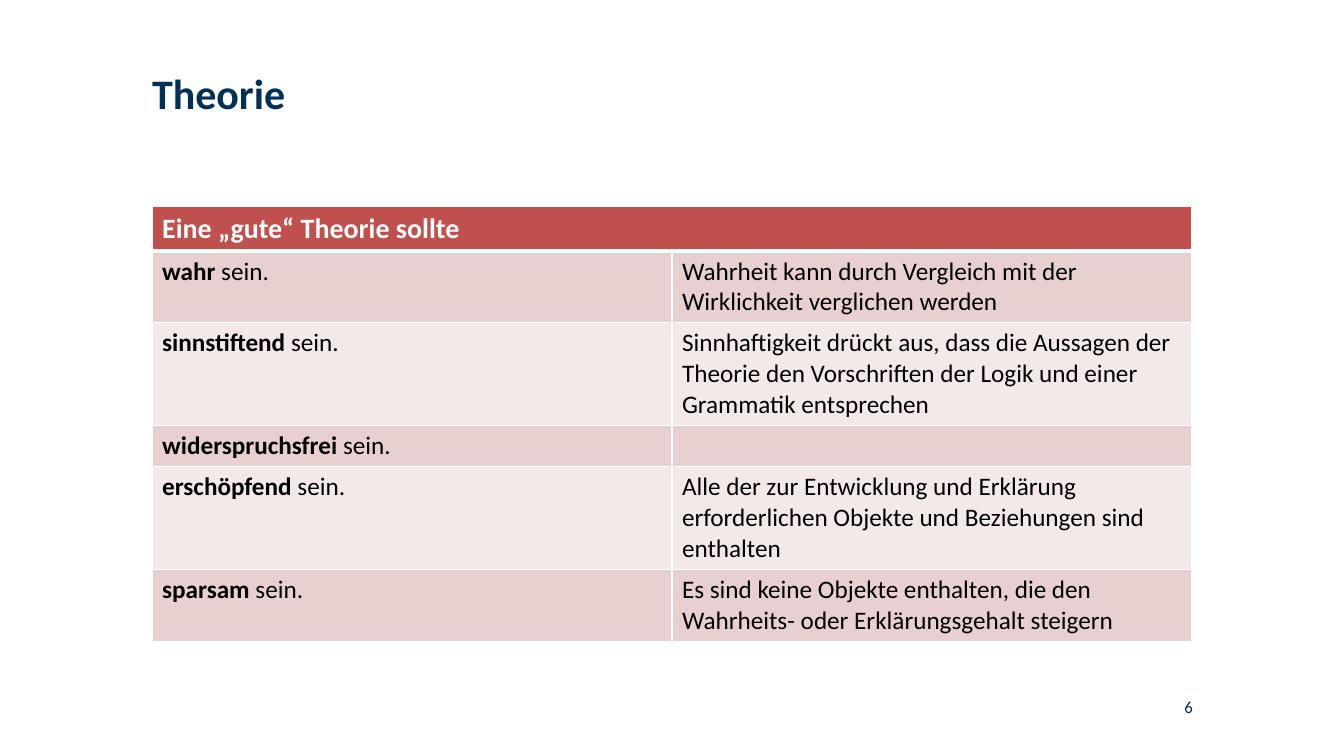
from lxml import etree
from pptx import Presentation
from pptx.dml.color import RGBColor
from pptx.enum import text
from pptx.oxml import ns
from pptx.util import Inches, Pt

# Content
TITLE = "Theorie"
HEADER = "Eine „gute“ Theorie sollte"
PAGE_NUMBER = "6"
# criterion, explanation, row height in inches
CRITERIA = [
    ("wahr", "Wahrheit kann durch Vergleich mit der Wirklichkeit verglichen werden", 0.71),
    ("sinnstiftend", "Sinnhaftigkeit drückt aus, dass die Aussagen der Theorie den "
     "Vorschriften der Logik und einer Grammatik entsprechen", 1.02),
    ("widerspruchsfrei", "", 0.41),
    ("erschöpfend", "Alle der zur Entwicklung und Erklärung erforderlichen Objekte "
     "und Beziehungen sind enthalten", 1.02),
    ("sparsam", "Es sind keine Objekte enthalten, die den Wahrheits- oder "
     "Erklärungsgehalt steigern", 0.71),
]
COLORS = {"navy": "003056", "header": "C0504D", "dark_band": "E8D0D0",
          "light_band": "F4E9E9", "white": "FFFFFF", "black": "000000"}
FONT = "Calibri"
LEFT, TABLE_TOP, COLUMN_WIDTH, HEADER_HEIGHT = 1.51, 2.05, 5.16, 0.43


def add_run(paragraph, words, size, color, bold=False):
    run = paragraph.add_run()
    run.text = words
    run.font.name = FONT
    run.font.size = Pt(size)
    run.font.bold = bold
    run.font.color.rgb = RGBColor.from_string(COLORS[color])


def clear_margins(frame):
    frame.margin_left = frame.margin_top = frame.margin_right = frame.margin_bottom = 0
    frame.word_wrap = True


def style_cell(cell, fill, top=1, bottom=1):
    cell.fill.solid()
    cell.fill.fore_color.rgb = RGBColor.from_string(COLORS[fill])
    properties = cell._tc.get_or_add_tcPr()
    widths = {"lnL": 1, "lnR": 1, "lnT": top, "lnB": bottom}
    for position, (side, width) in enumerate(widths.items()):
        line = etree.Element(ns.qn(f"a:{side}"), w=str(Pt(width)))
        solid = etree.SubElement(line, ns.qn("a:solidFill"))
        etree.SubElement(solid, ns.qn("a:srgbClr"), val=COLORS["white"])
        properties.insert(position, line)


presentation = Presentation()
presentation.slide_width = Inches(13.34)
presentation.slide_height = Inches(7.5)
slide = presentation.slides.add_slide(presentation.slide_layouts[5])

# Title
title = slide.shapes.title
title.left, title.top, title.width, title.height = map(Inches, (LEFT, 0.67, 7.06, 1.37))
clear_margins(title.text_frame)
title.text_frame.auto_size = text.MSO_AUTO_SIZE.NONE
title.text_frame.vertical_anchor = text.MSO_ANCHOR.TOP
title_paragraph = title.text_frame.paragraphs[0]
title_paragraph.alignment = text.PP_ALIGN.LEFT
add_run(title_paragraph, TITLE, 30, "navy", bold=True)

# Table with a merged header row
heights = [HEADER_HEIGHT] + [height for _, _, height in CRITERIA]
table = slide.shapes.add_table(
    len(heights), 2, Inches(LEFT), Inches(TABLE_TOP),
    Inches(2 * COLUMN_WIDTH), Inches(sum(heights))).table
for row, height in zip(table.rows, heights):
    row.height = Inches(height)

for column in range(2):
    style_cell(table.cell(0, column), "header", bottom=3)
table.cell(0, 0).merge(table.cell(0, 1))
add_run(table.cell(0, 0).text_frame.paragraphs[0], HEADER, 20, "white", bold=True)

# Criteria in alternating bands
for index, (criterion, explanation, _) in enumerate(CRITERIA, start=1):
    cells = [table.cell(index, column) for column in range(2)]
    for cell in cells:
        style_cell(cell, "dark_band" if index % 2 else "light_band", top=3 if index == 1 else 1)
    name, detail = (cell.text_frame.paragraphs[0] for cell in cells)
    add_run(name, criterion, 18, "black", bold=True)
    add_run(name, " sein.", 18, "black")
    if explanation:
        add_run(detail, explanation, 18, "black")

# Page number
number = slide.shapes.add_textbox(Inches(10.3), Inches(6.91), Inches(1.54), Inches(0.2))
clear_margins(number.text_frame)
number_paragraph = number.text_frame.paragraphs[0]
number_paragraph.alignment = text.PP_ALIGN.RIGHT
add_run(number_paragraph, PAGE_NUMBER, 12, "navy")

presentation.save("out.pptx")
